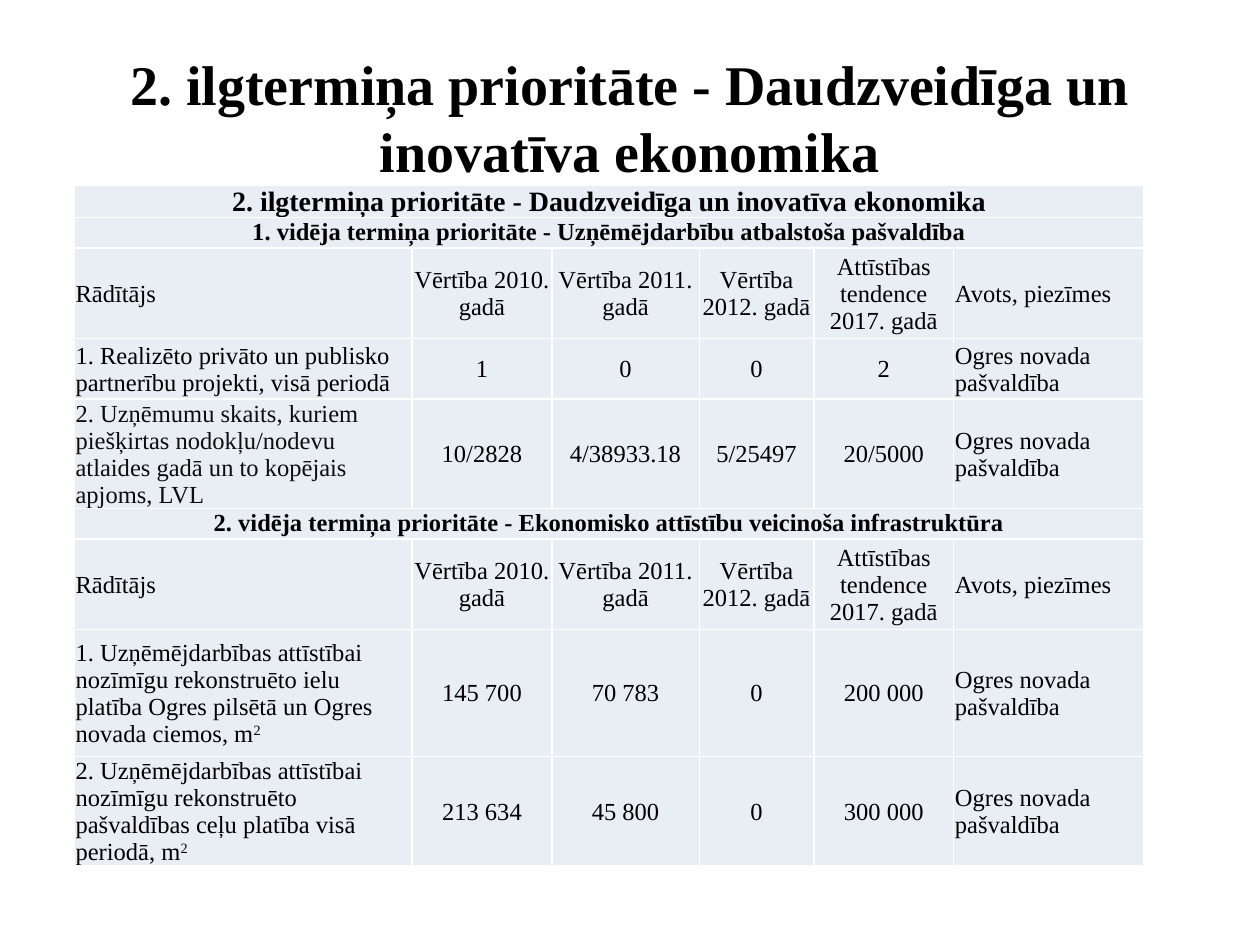
from dataclasses import dataclass
from lxml.etree import SubElement
from pptx import Presentation
from pptx.dml.color import RGBColor
from pptx.enum.text import MSO_ANCHOR, PP_ALIGN
from pptx.oxml.ns import qn
from pptx.table import _Cell
from pptx.text.text import TextFrame
from pptx.util import Inches, Length, Pt

WIDTH, HEIGHT = 10, 7.5
LINE = 0.24
FONT = "Times New Roman"
HEAD = "2. ilgtermiņa prioritāte - Daudzveidīga un inovatīva ekonomika"
LABELS = ("Rādītājs", "Vērtība 2010. gadā", "Vērtība 2011. gadā",
          "Vērtība 2012. gadā", "Attīstības tendence 2017. gadā", "Avots, piezīmes")
SOURCE = "Ogres novada pašvaldība"
SHARES = (26.8, 11.1, 11.7, 9.1, 11.1, 15.1)


@dataclass
class Row:
    texts: tuple[str, ...]
    lines: float
    size: int = 14
    power: str = ""
    ink: str = "000000"


ROWS = (
    Row((HEAD,), 1, size=16),
    Row(("1. vidēja termiņa prioritāte - Uzņēmējdarbību atbalstoša pašvaldība",), 1),
    Row(LABELS, 3),
    Row(("1. Realizēto privāto un publisko partnerību projekti, visā periodā",
         "1", "0", "0", "2", SOURCE), 2),
    Row(("2. Uzņēmumu skaits, kuriem piešķirtas nodokļu/nodevu atlaides gadā "
         "un to kopējais apjoms, LVL",
         "10/2828", "4/38933.18", "5/25497", "20/5000", SOURCE), 3, ink="0D0D0D"),
    Row(("2. vidēja termiņa prioritāte - Ekonomisko attīstību veicinoša infrastruktūra",), 1),
    Row(LABELS, 3),
    Row(("1. Uzņēmējdarbības attīstībai nozīmīgu rekonstruēto ielu platība "
         "Ogres pilsētā un Ogres novada ciemos, m",
         "145 700", "70 783", "0", "200 000", SOURCE), 4.2, power="2"),
    Row(("2. Uzņēmējdarbības attīstībai nozīmīgu rekonstruēto pašvaldības ceļu "
         "platība visā periodā, m",
         "213 634", "45 800", "0", "300 000", SOURCE), 3.2, power="2"),
)


def across(share: float) -> Length:
    return Inches(WIDTH * share / 100)


def down(share: float) -> Length:
    return Inches(HEIGHT * share / 100)


def color(code: str) -> RGBColor:
    return RGBColor.from_string(code)


def write(frame: TextFrame, text: str, *, size: int = 14, bold: bool = False,
          ink: str = "000000", align: PP_ALIGN = PP_ALIGN.CENTER, power: str = "") -> None:
    para = frame.paragraphs[0]
    para.alignment = align
    for part in filter(None, (text, power)):
        run = para.add_run()
        run.text = part
        run.font.name = FONT
        run.font.size = Pt(size)
        run.font.bold = bold
        run.font.color.rgb = color(ink)
    if power:
        run._r.get_or_add_rPr().set("baseline", "30000")


def style(cell: _Cell) -> None:
    props = cell._tc.get_or_add_tcPr()
    for side in ("lnL", "lnR", "lnT", "lnB"):
        edge = SubElement(props, qn(f"a:{side}"), w=str(Pt(1)))
        fill = SubElement(edge, qn("a:solidFill"))
        SubElement(fill, qn("a:srgbClr"), val="FFFFFF")
    cell.fill.solid()
    cell.fill.fore_color.rgb = color("E9EDF4")
    cell.margin_left = cell.margin_right = cell.margin_top = Inches(0.01)
    cell.margin_bottom = 0


def main() -> None:
    deck = Presentation()
    deck.slide_width, deck.slide_height = Inches(WIDTH), Inches(HEIGHT)
    slide = deck.slides.add_slide(deck.slide_layouts[5])
    title = slide.shapes.title
    title.left, title.top = across(5), down(4)
    title.width, title.height = across(90), down(16.67)
    title.text_frame.vertical_anchor = MSO_ANCHOR.MIDDLE
    write(title.text_frame, HEAD, size=32, bold=True)

    frame = slide.shapes.add_table(len(ROWS), len(SHARES), across(5.9), down(19.6),
                                   across(sum(SHARES)), down(74.27))
    table = frame.table
    for col, share in zip(table.columns, SHARES):
        col.width = across(share)
    for i, row in enumerate(ROWS):
        table.rows[i].height = Inches(LINE * row.lines)
        for cell in table.rows[i].cells:
            style(cell)
        band = len(row.texts) == 1
        if band:
            table.cell(i, 0).merge(table.cell(i, len(SHARES) - 1))
        for j, text in enumerate(row.texts):
            cell = table.cell(i, j)
            first = j == 0
            side = not band and j in (0, len(SHARES) - 1)
            cell.vertical_anchor = MSO_ANCHOR.TOP if band else MSO_ANCHOR.MIDDLE
            write(cell.text_frame, text, size=row.size, bold=band,
                  ink=row.ink if first else "000000",
                  align=PP_ALIGN.LEFT if side else PP_ALIGN.CENTER,
                  power=row.power if first else "")
    frame.height = down(74.27)
    deck.save("out.pptx")


if __name__ == "__main__":
    main()
